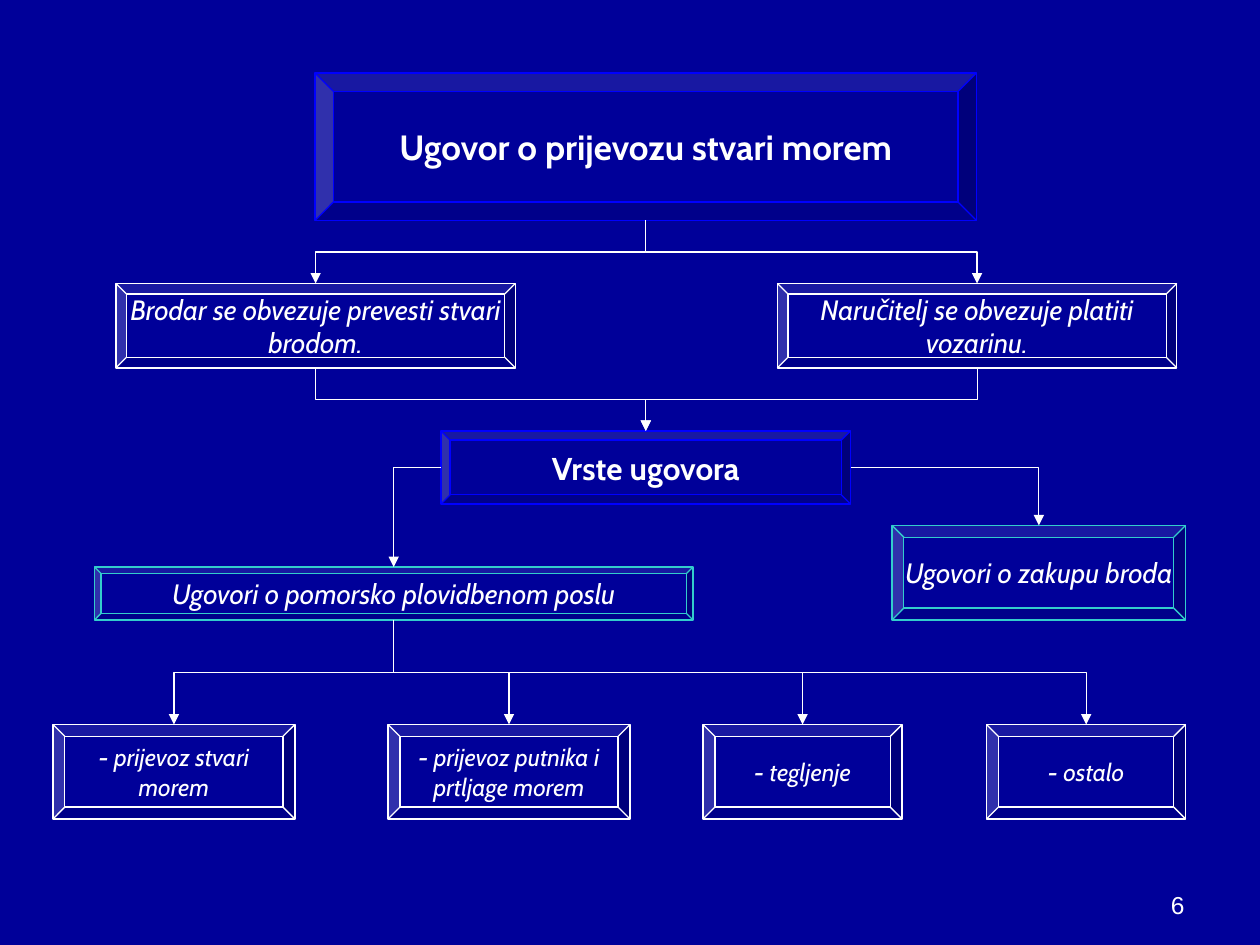
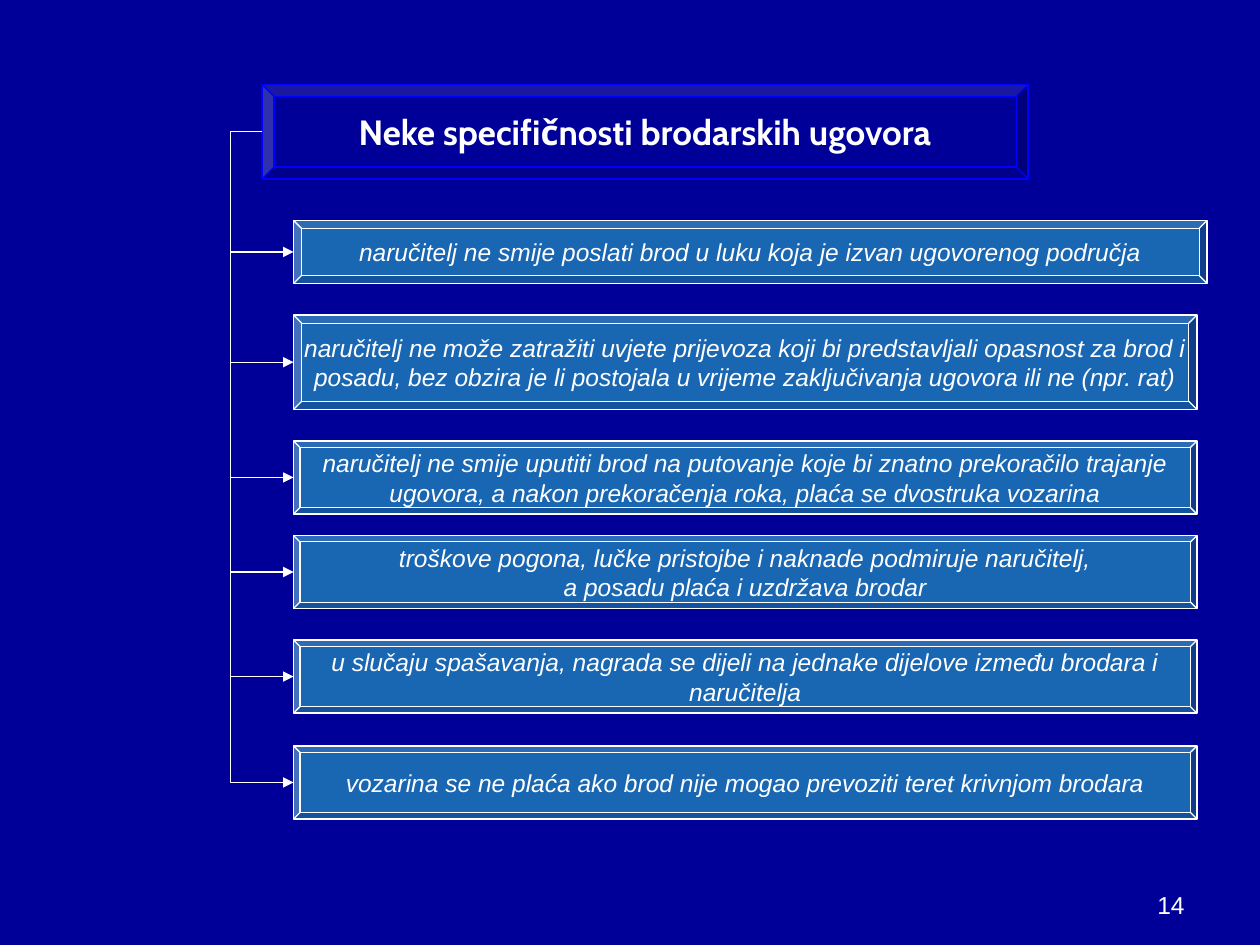
from lxml.etree import SubElement
from pptx import Presentation
from pptx.dml.color import RGBColor
from pptx.enum.shapes import MSO_CONNECTOR, MSO_SHAPE
from pptx.enum.text import MSO_ANCHOR, MSO_AUTO_SIZE, PP_ALIGN
from pptx.oxml.ns import qn
from pptx.util import Inches, Pt

NAVY, BLUE, TEAL, WHITE = "000099", "0000FF", "33CCCC", "FFFFFF"
HEADING_FONT, PLAIN_FONT = "Cabin", "Arial"


def color(hex_string):
    return RGBColor.from_string(hex_string)


def top(box):
    return box.left + box.width // 2, box.top


def bottom(box):
    return box.left + box.width // 2, box.top + box.height


def left(box):
    return box.left, box.top + box.height // 2


def right(box):
    return box.left + box.width, box.top + box.height // 2


class Deck:
    def __init__(self):
        self.prs = Presentation()
        self.prs.slide_width, self.prs.slide_height = Inches(10), Inches(7.5)
        background = self.prs.slide_master.background.fill
        background.solid()
        background.fore_color.rgb = color(NAVY)
        self.slide = None

    def new_slide(self, number):
        self.slide = self.prs.slides.add_slide(self.prs.slide_layouts[5])
        place = [Inches(v) for v in (7.17, 6.83, 2.33, 0.52)]
        frame = self.slide.shapes.add_textbox(*place).text_frame
        frame.word_wrap = True
        frame.vertical_anchor = MSO_ANCHOR.BOTTOM
        frame.text = number
        self.format_text(frame, 14, PLAIN_FONT, align=PP_ALIGN.RIGHT)

    def format_text(self, frame, size, font, bold=False, italic=False, align=PP_ALIGN.CENTER):
        for paragraph in frame.paragraphs:
            paragraph.alignment = align
            for run in paragraph.runs:
                run.font.size, run.font.name = Pt(size), font
                run.font.bold, run.font.italic = bold, italic
                run.font.color.rgb = color(WHITE)

    def center(self, frame, wrap=True):
        """Centre the text vertically in a frame without margins."""
        frame.margin_left = frame.margin_right = 0
        frame.margin_top = frame.margin_bottom = 0
        frame.vertical_anchor = MSO_ANCHOR.MIDDLE
        frame.word_wrap = wrap

    def bevel(self, x, y, width, height, line=WHITE, fill=NAVY, alpha=48, edge=0.125):
        place = [Inches(v) for v in (x, y, width, height)]
        box = self.slide.shapes.add_shape(MSO_SHAPE.BEVEL, *place)
        box.shadow.inherit = False
        box.adjustments[0] = edge
        box.fill.solid()
        box.fill.fore_color.rgb = color(fill)
        tint = box._element.spPr.find(qn("a:solidFill"))[0]
        SubElement(tint, qn("a:alpha")).set("val", str(alpha * 1000))
        box.line.color.rgb = color(line)
        box.line.width = Pt(0.75)
        return box

    def label(self, box, text, size, font=HEADING_FONT, bold=False, italic=True, wrap=True):
        self.center(box.text_frame, wrap)
        box.text_frame.text = text
        self.format_text(box.text_frame, size, font, bold, italic)
        return box

    def title(self, text, x, y, width, height):
        """Lay the slide title over a bevelled frame and return the frame."""
        frame = self.bevel(x, y, width, height, BLUE)
        title = self.slide.shapes.title
        title.left, title.top = frame.left, frame.top
        title.width, title.height = frame.width, frame.height
        self.slide.shapes._spTree.append(title._element)
        self.label(title, text, 20, bold=True, italic=False, wrap=False)
        title.text_frame.auto_size = MSO_AUTO_SIZE.NONE
        return frame

    def dashed_item(self, text, *place):
        box = self.label(self.bevel(*place), "- ", 14)
        paragraph = box.text_frame.paragraphs[0]
        paragraph.add_run().text = text
        self.format_text(box.text_frame, 14, HEADING_FONT, italic=True)
        paragraph.runs[0].font.bold = True
        return box

    def elbow(self, start, end, preset="bentConnector3", bend=50000):
        """Draw an arrow that leaves its start horizontally."""
        arrow = self.slide.shapes.add_connector(MSO_CONNECTOR.ELBOW, *start, *end)
        arrow.line.color.rgb = color(WHITE)
        arrow.line.width = Pt(0.75)
        properties = arrow._element.spPr
        SubElement(properties.find(qn("a:ln")), qn("a:tailEnd")).set("type", "triangle")
        SubElement(properties, qn("a:effectLst"))
        geometry = properties.find(qn("a:prstGeom"))
        geometry.set("prst", preset)
        if preset == "bentConnector3":
            guide = SubElement(geometry.find(qn("a:avLst")), qn("a:gd"))
            guide.set("name", "adj1")
            guide.set("fmla", f"val {bend}")
        return arrow

    def drop(self, start, end):
        """Draw an arrow that leaves downwards: an elbow turned a quarter."""
        (x1, y1), (x2, y2) = start, end
        span, fall = abs(x2 - x1), y2 - y1
        x, y = (x1 + x2 - fall) // 2, (y1 + y2 - span) // 2
        arrow = self.elbow((x, y), (x + fall, y + span))
        transform = arrow._element.spPr.find(qn("a:xfrm"))
        transform.set("rot", str((90 if x2 < x1 else 270) * 60000))
        if x2 > x1:
            transform.set("flipH", "1")


def contract_slide(deck):
    deck.new_slide("6")
    contract = deck.title("Ugovor o prijevozu stvari morem", 2.5, 0.58, 5.25, 1.17)
    kinds = deck.label(deck.bevel(3.5, 3.42, 3.25, 0.58, BLUE), "Vrste ugovora", 18,
                       bold=True, italic=False, wrap=False)
    for x, duty in ((0.92, "Brodar se obvezuje prevesti stvari brodom."),
                    (6.17, "Naručitelj se obvezuje platiti vozarinu.")):
        party = deck.label(deck.bevel(x, 2.25, 3.17, 0.67), duty, 16)
        deck.drop(bottom(contract), top(party))
        deck.drop(bottom(party), top(kinds))

    charter = deck.label(deck.bevel(7.08, 4.17, 2.33, 0.75, TEAL), "Ugovori o zakupu broda", 16)
    shipping = deck.label(deck.bevel(0.75, 4.5, 4.75, 0.42, TEAL),
                          "Ugovori o pomorsko plovidbenom poslu", 16)
    deck.elbow(right(kinds), top(charter), "bentConnector2")
    deck.elbow(left(kinds), top(shipping), "bentConnector2")

    for x, width, service in ((0.42, 1.92, "prijevoz stvari morem"),
                              (3.08, 1.92, "prijevoz putnika i prtljage morem"),
                              (5.58, 1.58, "tegljenje"),
                              (7.83, 1.58, "ostalo")):
        item = deck.dashed_item(service, x, 5.75, width, 0.75)
        deck.drop(bottom(shipping), top(item))


def specifics_slide(deck):
    deck.new_slide("14")
    heading = deck.title("Neke specifičnosti brodarskih ugovora", 2.08, 0.67, 6.08, 0.75)
    rules = (
        (1.75, 7.25, 0.5, 0.125,
         "naručitelj ne smije poslati brod u luku koja je izvan ugovorenog područja"),
        (2.5, 7.17, 0.75, 0.087,
         "naručitelj ne može zatražiti uvjete prijevoza koji bi predstavljali opasnost za brod i "
         "posadu, bez obzira je li postojala u vrijeme zaključivanja ugovora ili ne (npr. rat)"),
        (3.5, 7.17, 0.58, 0.087,
         "naručitelj ne smije uputiti brod na putovanje koje bi znatno prekoračilo trajanje "
         "ugovora, a nakon prekoračenja roka, plaća se dvostruka vozarina"),
        (4.25, 7.17, 0.58, 0.087,
         "troškove pogona, lučke pristojbe i naknade podmiruje naručitelj,\n"
         "a posadu plaća i uzdržava brodar"),
        (5.08, 7.17, 0.58, 0.087,
         "u slučaju spašavanja, nagrada se dijeli na jednake dijelove između brodara i naručitelja"),
        (5.92, 7.17, 0.58, 0.087,
         "vozarina se ne plaća ako brod nije mogao prevoziti teret krivnjom brodara"),
    )
    for y, width, height, edge, text in rules:
        rule = deck.bevel(2.33, y, width, height, fill=TEAL, alpha=50, edge=edge)
        deck.label(rule, text, 14, PLAIN_FONT)
        deck.elbow(left(heading), left(rule), bend=-100000)


def main():
    deck = Deck()
    contract_slide(deck)
    specifics_slide(deck)
    deck.prs.save("out.pptx")


if __name__ == "__main__":
    main()
